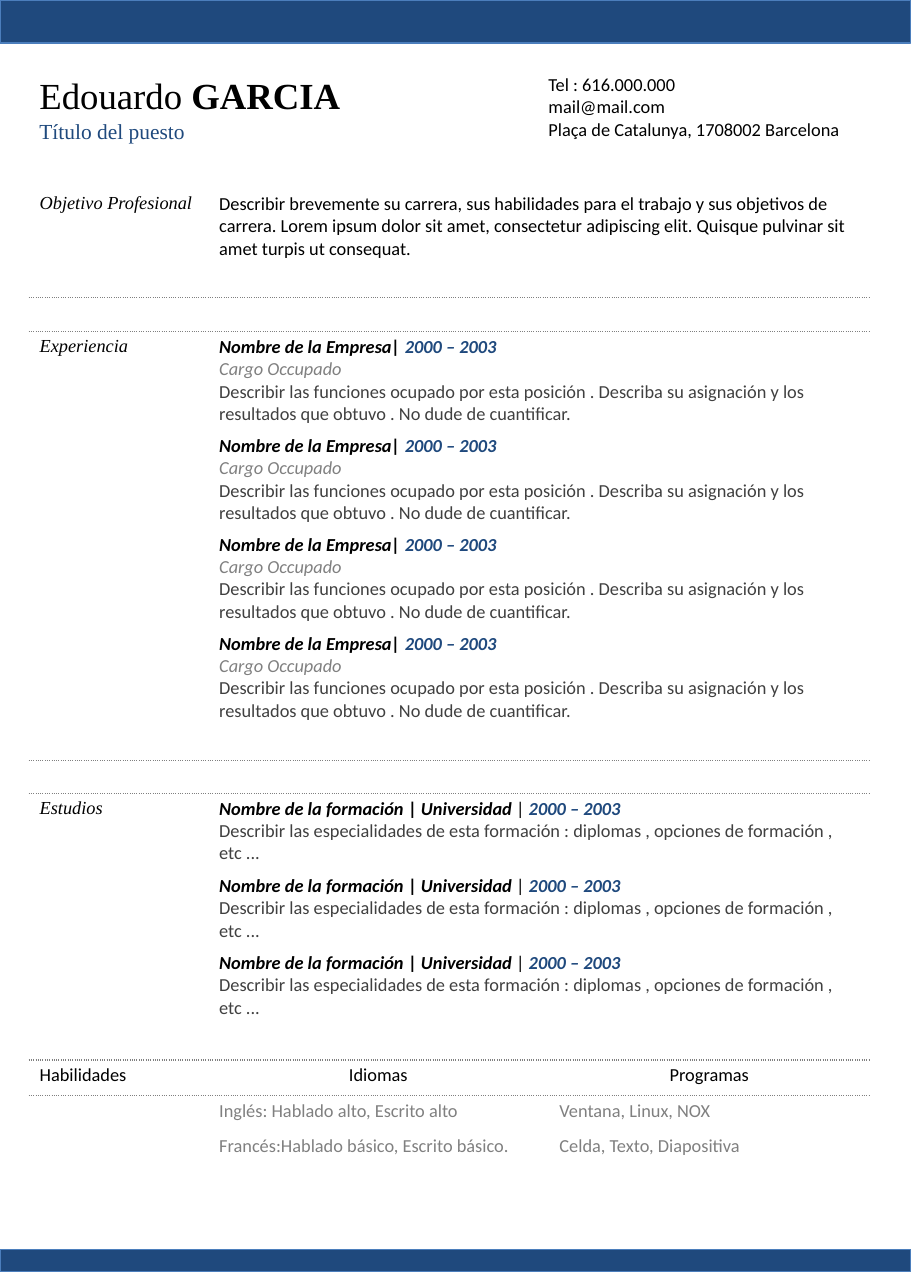
from lxml.etree import SubElement
from pptx import Presentation
from pptx.dml.color import RGBColor as RGB
from pptx.enum.shapes import MSO_SHAPE as SHAPE
from pptx.enum.text import PP_ALIGN as ALIGN
from pptx.oxml.ns import qn
from pptx.util import Inches, Pt

BLUE, EDGE, BLACK, DARK, GRAY = "1F497D", "4B7EBC", "000000", "404040", "808080"
SERIF = "Times New Roman"
NO_GRID = "{2D5ABB26-0587-4C30-8999-92F81FD0307C}"


def color(value):
    return RGB.from_string(value)


def run(text, c=BLACK, b=False, i=False, size=12, font="Calibri"):
    return text, c, b, i, size, font


class Page:
    def __init__(self, prs):
        self.width, self.height = prs.slide_width, prs.slide_height
        self.s = prs.slides.add_slide(prs.slide_layouts[6])

    def x(self, percent):
        return round(self.width * percent / 100)

    def y(self, percent):
        return round(self.height * percent / 100)

    def bar(self, top, height):
        sp = self.s.shapes.add_shape(SHAPE.RECTANGLE, 0, self.y(top), self.width, self.y(height))
        sp.shadow.inherit = False
        sp.fill.solid()
        sp.fill.fore_color.rgb = color(BLUE)
        sp.line.color.rgb = color(EDGE)
        sp.line.width = Pt(0.75)

    def add_runs(self, tf, paragraphs, align=ALIGN.LEFT):
        for n, runs in enumerate(paragraphs):
            p = tf.add_paragraph() if n else tf.paragraphs[0]
            p.alignment = align
            for text, c, b, i, size, font in runs:
                r = p.add_run()
                r.text = text
                r.font.name, r.font.size = font, Pt(size)
                r.font.bold, r.font.italic = b, i
                r.font.color.rgb = color(c)

    def text(self, left, top, width, height, *runs):
        sp = self.s.shapes.add_textbox(self.x(left), self.y(top), self.x(width), self.y(height))
        sp.text_frame.word_wrap = False
        self.add_runs(sp.text_frame, [runs])

    def table(self, left, top, columns, heights):
        frame = self.s.shapes.add_table(len(heights), len(columns), self.x(left), self.y(top),
                                        self.x(sum(columns)), self.y(sum(heights)))
        table = frame.table
        table.first_row = table.horz_banding = False
        table._tbl.tblPr.find(qn("a:tableStyleId")).text = NO_GRID
        for column, width in zip(table.columns, columns):
            column.width = self.x(width)
        for row, height in zip(table.rows, heights):
            row.height = self.y(height)
        return table

    def cell(self, cell, paragraphs, align=ALIGN.LEFT):
        cell.margin_top = cell.margin_bottom = Inches(0.04)
        cell.fill.background()
        if paragraphs:
            self.add_runs(cell.text_frame, paragraphs, align)
        else:
            SubElement(cell.text_frame.paragraphs[0]._p, qn("a:endParaRPr"), sz="800")

    def border(self, cell, side):
        ln = SubElement(cell._tc.get_or_add_tcPr(), qn("a:" + side), w=str(Pt(1)))
        fill = SubElement(ln, qn("a:solidFill"))
        SubElement(fill, qn("a:srgbClr"), val=GRAY)
        SubElement(ln, qn("a:prstDash"), val="sysDot")


def main():
    prs = Presentation()
    prs.slide_width, prs.slide_height = Inches(8.27), Inches(11.69)
    page = Page(prs)
    page.bar(0, 3.34)
    page.bar(97.01, 1.71)
    page.text(3.14, 5.22, 35.79, 4.28, run("Edouardo ", size=24, font=SERIF),
              run("GARCIA", b=True, size=24, font=SERIF))
    page.text(3.14, 8.73, 18.5, 2.91, run("Título del puesto", BLUE, size=14, font=SERIF))
    contacts = ["Tel : 616.000.000", "mail@mail.com", "Plaça de Catalunya, 1708002 Barcelona"]
    for n, contact in enumerate(contacts):
        page.text(59.01, 5.22 + 1.75 * n, 35.79, 2.57, run(contact))

    dates = run("2000 – 2003", BLUE, b=True, i=True)
    job = [
        [run("Nombre de la Empresa| ", b=True, i=True), dates],
        [run("Cargo Occupado", GRAY, i=True)],
        [run("Describir las funciones ocupado por esta posición . Describa su asignación y los "
             "resultados que obtuvo . No dude de cuantificar.", DARK)],
    ]
    degree = [
        [run("Nombre de la formación ", b=True, i=True), run("| ", b=True),
         run("Universidad", b=True, i=True), run(" | "), dates],
        [run("Describir las especialidades de esta formación : diplomas , opciones de formación , "
             "etc ...", DARK)],
    ]
    objective = [[run("Describir brevemente su carrera, sus habilidades para el trabajo y sus "
                      "objetivos de carrera. Lorem ipsum dolor sit amet, consectetur adipiscing "
                      "elit. Quisque pulvinar sit amet turpis ut consequat.")]]
    sections = [
        ("Objetivo Profesional", [objective], 5.99, [2.48, 2.65]),
        ("Experiencia", [job] * 4, 7.68, [2.57, 2.57]),
        ("Estudios", [degree] * 3, 5.99, [2.74]),
    ]
    skills = [
        ("Habilidades", "Idiomas", "Programas"),
        ("", "Inglés: Hablado alto, Escrito alto", "Ventana, Linux, NOX"),
        ("", "Francés:Hablado básico, Escrito básico.", "Celda, Texto, Diapositiva"),
        ("", "", ""),
    ]

    rows, heights, rules = [], [], []
    for title, entries, height, gaps in sections:
        for n, entry in enumerate(entries):
            label = [[run(title, i=True, font=SERIF)]] if n == 0 else []
            rows.append((label, entry))
            heights.append(height)
        rules.append(len(rows))
        rows += [([], [])] * len(gaps)
        heights += gaps
    first_skill = len(rows)
    heights += [2.74] * len(skills)

    table = page.table(3.14, 14.63, [19.71, 37.36, 35.31], heights)
    for rule in rules:
        for column in range(3):
            page.border(table.cell(rule, column), "lnB")
            page.border(table.cell(rule + 1, column), "lnT")
    for n, contents in enumerate(rows):
        table.cell(n, 1).merge(table.cell(n, 2))
        for column, paragraphs in enumerate(contents):
            page.cell(table.cell(n, column), paragraphs)
    for n, texts in enumerate(skills):
        for column, text in enumerate(texts):
            paragraphs = [[run(text, GRAY if n else BLACK)]] if text else []
            align = ALIGN.CENTER if n == 0 and column else ALIGN.LEFT
            page.cell(table.cell(first_skill + n, column), paragraphs, align)
    prs.save("out.pptx")


if __name__ == "__main__":
    main()
